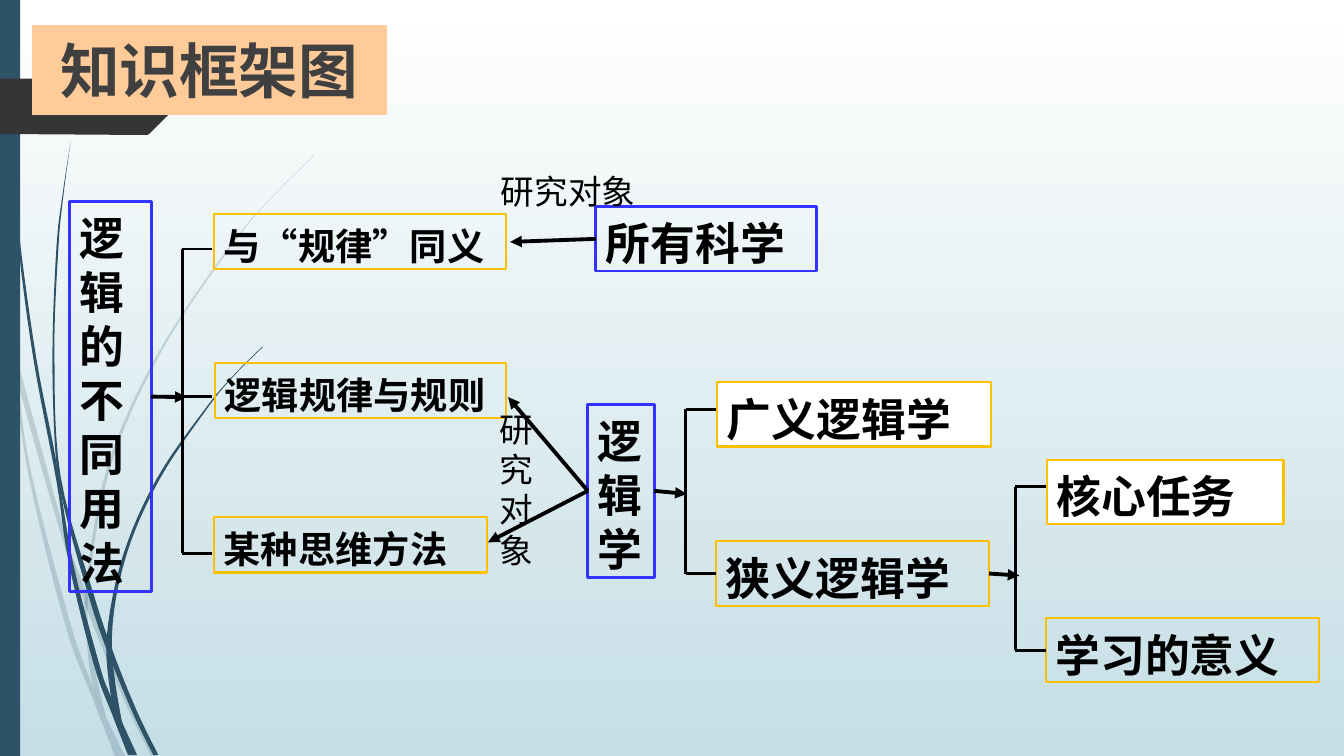
from lxml import etree
from pptx import Presentation
from pptx import util as u
from pptx.dml.color import RGBColor
from pptx.enum import shapes as kinds, text as t
from pptx.oxml import ns

FONT = "Noto Sans CJK SC"
STEEL, BLACK, WHITE = "2E5369", "000000", "FFFFFF"
BLUE, GOLD, PEACH = "3333FF", "FFC000", "FFCC99"
LINE_PITCH = 1.205  # line height as a multiple of the text size

TITLE = ("知识框架图", (0.32, 0.25, 3.51, 0.89))

# name: (left, top, width, height, text size, outline, outline width, fill)
BOXES = {
    "逻辑学": (5.83, 4.01, 0.66, 1.72, 32, BLUE, 2, None),
    "逻辑的不同用法": (0.69, 2.0, 0.81, 3.87, 32, BLUE, 2, None),
    "广义逻辑学": (7.11, 3.79, 2.72, 0.64, 32, GOLD, 1.5, WHITE),
    "狭义逻辑学": (7.1, 5.37, 2.71, 0.64, 32, GOLD, 1.5, None),
    "核心任务": (10.38, 4.56, 2.35, 0.64, 32, GOLD, 1.5, WHITE),
    "学习的意义": (10.37, 6.13, 2.71, 0.64, 32, GOLD, 1.5, None),
    "与“规律”同义": (2.12, 2.12, 2.9, 0.55, 26.6, GOLD, 1.5, None),
    "逻辑规律与规则": (2.13, 3.6, 2.89, 0.55, 26.6, GOLD, 1.5, None),
    "某种思维方法": (2.12, 5.13, 2.71, 0.55, 26.6, GOLD, 1.5, None),
    "所有科学": (5.91, 2.05, 2.19, 0.64, 32, BLUE, 2, None),
}
# (text, place, wraps)
LABELS = [
    ("研究对象", (4.87, 1.6, 1.53, 0.5), False),
    ("研究对象", (4.86, 3.96, 0.85, 1.72), True),
]
LEFT, RIGHT = 1, 3  # connection sites of a rectangle
# (box, side the arrow leaves from, arrow tip)
ARROWS = [
    ("所有科学", LEFT, (5.06, 2.4)),
    ("逻辑学", RIGHT, (6.81, 4.9)),
    ("狭义逻辑学", RIGHT, (10.11, 5.71)),
    ("逻辑的不同用法", RIGHT, (1.85, 3.94)),
    ("逻辑学", LEFT, (5.04, 3.94)),
    ("逻辑学", LEFT, (4.84, 5.38)),
]
# (spine x, stub end x, stub heights; a box name stands for its middle)
BRACKETS = [
    (6.8, 7.1, [4.06, "狭义逻辑学"]),
    (10.07, 10.37, [4.83, "学习的意义"]),
    (1.81, 2.1, [2.47, 3.93, 5.49]),
]

TAG = [(0, 0.78), (1.46, 0.78), (1.48, 0.79), (1.73, 1.04), (1.74, 1.06),
       (1.73, 1.08), (1.48, 1.33), (1.46, 1.34), (0, 1.33)]
# Grass blades: (opacity %, one edge from tip to root, other edge from tip to root)
BLADES = [
    (20,
     [(0, 2.99), (0.11, 3.5), (0.28, 4.7), (0.65, 6.21), (0.92, 6.93), (1.14, 7.5)],
     [(0, 2.82), (0.09, 3.22), (0.17, 3.76), (0.31, 4.69), (0.7, 6.19), (0.93, 6.83),
      (1.05, 7.11), (1.24, 7.5)]),
    (20,
     [(0.14, 3.45), (0.17, 3.76), (0.58, 5.22), (0.84, 5.99), (1.23, 6.94), (1.5, 7.5)],
     [(0.14, 3.45), (0.62, 5.2), (0.85, 5.86), (1.27, 6.92), (1.55, 7.5)]),
    (20,
     [(3.12, 1.53), (2.68, 1.97), (2.28, 2.44), (1.58, 3.48), (1.07, 4.61), (0.85, 5.84),
      (0.87, 6.46), (0.93, 6.83), (1.05, 7.11)],
     [(3.12, 1.54), (2.68, 1.98), (2.29, 2.45), (1.6, 3.49), (1.1, 4.62), (0.88, 5.84),
      (0.91, 6.46), (1.05, 7.11)]),
    (100,
     [(0.03, 0), (0.04, 0.48), (0.07, 1.1), (0.17, 2.33), (0.33, 3.55), (0.56, 4.77),
      (0.68, 5.57), (0.93, 6.59), (1.11, 7.08), (1.27, 7.49)],
     [(0.04, 0), (0.05, 0.48), (0.08, 1.09), (0.19, 2.32), (0.36, 3.55), (0.55, 4.53),
      (0.72, 5.56), (0.98, 6.57), (1.1, 6.91), (1.36, 7.49)]),
    (100,
     [(0.7, 1.41), (0.62, 1.93), (0.56, 2.45), (0.52, 3.49), (0.55, 4.49), (0.64, 5.05),
      (0.88, 5.92), (1.06, 6.45), (1.32, 7.08), (1.52, 7.49)],
     [(0.7, 1.41), (0.63, 1.93), (0.58, 2.45), (0.54, 3.49), (0.6, 4.72), (0.93, 5.9),
      (1.13, 6.49), (1.36, 7.06), (1.57, 7.49)]),
    (100,
     [(2.6, 3.44), (2.31, 3.73), (2.04, 4.05), (1.56, 4.74), (1.22, 5.51), (1.06, 6.31),
      (1.1, 6.91), (1.17, 7.22), (1.31, 7.49)],
     [(2.61, 3.44), (2.31, 3.74), (2.05, 4.06), (1.58, 4.76), (1.25, 5.52), (1.11, 6.33),
      (1.21, 7.16), (1.33, 7.49)]),
]


def rgb(value):
    return RGBColor.from_string(value)


def inches(values):
    return [u.Inches(value) for value in values]


def paint(shape, fill=None, line=None, width=1):
    shape.shadow.inherit = False
    if fill:
        shape.fill.solid()
        shape.fill.fore_color.rgb = rgb(fill)
    else:
        shape.fill.background()
    if line:
        shape.line.color.rgb = rgb(line)
        shape.line.width = u.Pt(width)
    else:
        shape.line.fill.background()


def write(shape, wording, size, color=BLACK, bold=False, wrap=True):
    frame = shape.text_frame
    frame.text = wording
    frame.word_wrap = wrap
    frame.auto_size = t.MSO_AUTO_SIZE.NONE
    frame.vertical_anchor = t.MSO_ANCHOR.TOP
    frame.margin_top = u.Inches(0.09)
    paragraph = frame.paragraphs[0]
    paragraph.alignment = t.PP_ALIGN.LEFT
    paragraph.line_spacing = u.Pt(round(size * LINE_PITCH, 1))
    font = paragraph.runs[0].font
    font.name, font.size, font.bold = FONT, u.Pt(size), bold
    font.color.rgb = rgb(color)
    etree.SubElement(font._element, ns.qn("a:ea")).set("typeface", FONT)


def smooth(points, steps=6):
    """Return points on a Catmull-Rom curve through the given ones."""
    padded = [points[0], *points, points[-1]]
    curve = []
    for a, b, c, d in zip(padded, padded[1:], padded[2:], padded[3:]):
        for step in range(steps):
            s = step / steps
            curve.append(tuple(
                q + s / 2 * (r - p + s * (2 * p - 5 * q + 4 * r - v + s * (3 * (q - r) + v - p)))
                for p, q, r, v in zip(a, b, c, d)))
    return curve + [points[-1]]


def add_outline(points, color, opacity=100):
    corners = [inches(point) for point in points]
    builder = slide.shapes.build_freeform(*corners[0])
    builder.add_line_segments(corners[1:], close=True)
    shape = builder.convert_to_shape()
    paint(shape, color)
    if opacity < 100:
        color_node = shape._element.spPr.find(".//" + ns.qn("a:srgbClr"))
        etree.SubElement(color_node, ns.qn("a:alpha")).set("val", str(opacity * 1000))


def add_line(start, end, width, arrow=False):
    line = slide.shapes.add_connector(kinds.MSO_CONNECTOR.STRAIGHT, *inches(start + end))
    line.line.color.rgb = rgb(BLACK)
    line.line.width = u.Pt(width)
    if arrow:
        etree.SubElement(line.line._get_or_add_ln(), ns.qn("a:tailEnd")).set("type", "triangle")
    etree.SubElement(line._element.spPr, ns.qn("a:effectLst"))
    return line


presentation = Presentation()
presentation.slide_width, presentation.slide_height = inches((13.33, 7.5))
slide = presentation.slides.add_slide(presentation.slide_layouts[5])
background = slide.background.fill
background.gradient()
background.gradient_angle = 270
for stop, color in zip(background.gradient_stops, (WHITE, "C5DEE5")):
    stop.color.rgb = rgb(color)

for opacity, edge, other_edge in BLADES:
    add_outline(smooth(edge) + smooth(other_edge)[::-1], STEEL, opacity)
side_bar = slide.shapes.add_shape(kinds.MSO_SHAPE.RECTANGLE, *inches((0, 0, 0.2, 7.5)))
paint(side_bar, STEEL)
add_outline(TAG, "353535")

title = slide.shapes.title
title.left, title.top, title.width, title.height = inches(TITLE[1])
geometry = etree.SubElement(title._element.spPr, ns.qn("a:prstGeom"), prst="roundRect")
etree.SubElement(geometry, ns.qn("a:avLst"))
title.fill.solid()
title.fill.fore_color.rgb = rgb(PEACH)
title.line.color.rgb = rgb(PEACH)
title.line.width = u.Pt(0.75)
write(title, TITLE[0], 42.6, "404040", bold=True, wrap=False)
title.text_frame.margin_top = u.Inches(0.05)
title.text_frame.vertical_anchor = t.MSO_ANCHOR.MIDDLE
title.text_frame.paragraphs[0].alignment = t.PP_ALIGN.CENTER
title.text_frame.paragraphs[0].line_spacing = 1.0
slide.shapes._spTree.append(title._element)  # in front of the tag

boxes = {}
for name, (left, top, width, height, size, outline, weight, fill) in BOXES.items():
    box = slide.shapes.add_shape(kinds.MSO_SHAPE.RECTANGLE, *inches((left, top, width, height)))
    paint(box, fill, outline, weight)
    write(box, name, size, bold=True)
    boxes[name] = box

for wording, place, wrap in LABELS:
    write(slide.shapes.add_textbox(*inches(place)), wording, 24, wrap=wrap)

for spine_x, stub_x, stubs in BRACKETS:
    heights = []
    for stub in stubs:
        joined = stub in boxes
        y = BOXES[stub][1] + BOXES[stub][3] / 2 if joined else stub
        line = add_line((spine_x, y), (stub_x, y), 2)
        if joined:
            line.end_connect(boxes[stub], LEFT)
        heights.append(y)
    add_line((spine_x, heights[0]), (spine_x, heights[-1]), 2)

for name, side, tip in ARROWS:
    add_line(tip, tip, 2.75, arrow=True).begin_connect(boxes[name], side)

presentation.save("out.pptx")
